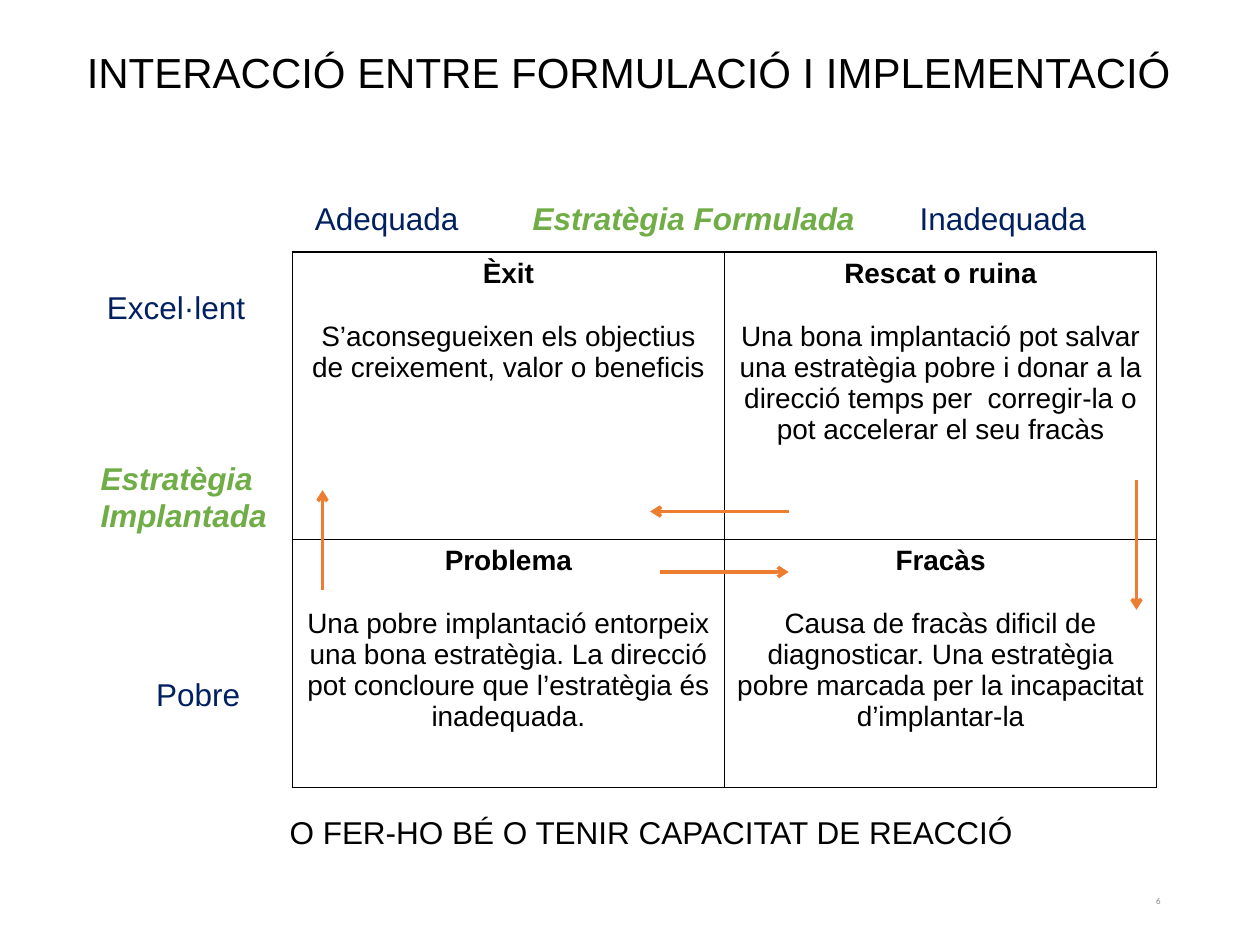
from lxml.etree import SubElement
from pptx import Presentation
from pptx.dml.color import RGBColor
from pptx.enum.shapes import MSO_CONNECTOR as Connector
from pptx.enum.text import MSO_ANCHOR as Anchor, PP_ALIGN as Align
from pptx.oxml.ns import qn
from pptx.util import Inches, Pt

BLACK = RGBColor(0x00, 0x00, 0x00)
NAVY = RGBColor(0x00, 0x20, 0x60)
GREEN = RGBColor(0x70, 0xAD, 0x47)
ORANGE = RGBColor(0xED, 0x7D, 0x31)
GREY = RGBColor(0x8C, 0x8C, 0x8C)

# Text styles
TITLE = dict(name="Arial", size=Pt(24), color=BLACK)
CLOSING = dict(TITLE, size=Pt(18))
LEVEL = dict(CLOSING, color=NAVY)
AXIS = dict(CLOSING, color=GREEN, bold=True, italic=True)
CELL = dict(TITLE, size=Pt(16), bold=False)
HEADING = dict(CELL, bold=True)
NUMBER = dict(name="Calibri", size=Pt(5.1), color=GREY)

# Matrix: one (heading, explanation) pair per quadrant
QUADRANTS = [
    [("Èxit", "S’aconsegueixen els objectius de creixement, valor o beneficis"),
     ("Rescat o ruina", "Una bona implantació pot salvar una estratègia pobre i donar a la "
      "direcció temps per  corregir-la o pot accelerar el seu fracàs")],
    [("Problema", "Una pobre implantació entorpeix una bona estratègia. La direcció "
      "pot concloure que l’estratègia és inadequada."),
     ("Fracàs", "Causa de fracàs dificil de diagnosticar. Una estratègia pobre "
      "marcada per la incapacitat d’implantar-la")],
]
LEFT, TOP = 2.32, 2.0
COLUMN_WIDTH = 3.43
ROW_HEIGHTS = [2.28, 1.97]
MIDDLE_X, MIDDLE_Y = LEFT + COLUMN_WIDTH, TOP + ROW_HEIGHTS[0]
BOTTOM = TOP + sum(ROW_HEIGHTS)
LINE_HEIGHT = 0.4
HEADER_Y = TOP - 0.47

# Texts: lines, left, top, width, height, style, alignment, wrap
TEXTS = [
    (["INTERACCIÓ ENTRE FORMULACIÓ I IMPLEMENTACIÓ"], 0.59, 0.32, 9.29, 0.5,
     TITLE, Align.LEFT, True),
    (["Adequada"], 2.4, HEADER_Y, 1.35, LINE_HEIGHT, LEVEL, Align.LEFT, False),
    (["Estratègia Formulada"], 4.13, HEADER_Y, 2.76, LINE_HEIGHT, AXIS, Align.JUSTIFY, True),
    (["Inadequada"], 7.2, HEADER_Y, 1.53, LINE_HEIGHT, LEVEL, Align.LEFT, False),
    (["Excel·lent"], 0.75, 2.24, 1.31, LINE_HEIGHT, LEVEL, Align.LEFT, False),
    (["Estratègia", "Implantada"], 0.7, 3.59, 1.53, 0.71, AXIS, Align.JUSTIFY, False),
    (["Pobre"], 1.14, 5.31, 0.88, LINE_HEIGHT, LEVEL, Align.LEFT, False),
    (["O FER-HO BÉ O TENIR CAPACITAT DE REACCIÓ"], 2.2, BOTTOM + 0.15, 7.39, LINE_HEIGHT,
     CLOSING, Align.LEFT, True),
    (["6"], 7.06, 6.95, 2.25, LINE_HEIGHT, NUMBER, Align.RIGHT, True),
]

# Arrows between quadrants, as offsets from the centre of the matrix
ARROWS = [
    ((0.51, -0.22), (-0.59, -0.22)),
    ((3.27, -0.47), (3.27, 0.56)),
    ((-0.51, 0.26), (0.51, 0.26)),
    ((-3.19, 0.4), (-3.19, -0.39)),
]


def write(paragraph, text, style, alignment):
    paragraph.alignment = alignment
    font = paragraph.add_run().font
    paragraph.runs[0].text = text
    for key, value in style.items():
        if key == "color":
            font.color.rgb = value
        else:
            setattr(font, key, value)


def add_text(slide, lines, left, top, width, height, style, alignment, wrap):
    box = slide.shapes.add_textbox(*map(Inches, (left, top, width, height)))
    frame = box.text_frame
    frame.word_wrap = wrap
    frame.vertical_anchor = Anchor.MIDDLE if style is NUMBER else Anchor.TOP
    for index, line in enumerate(lines):
        paragraph = frame.add_paragraph() if index else frame.paragraphs[0]
        write(paragraph, line, style, alignment)


def add_borders(cell):
    properties = cell._tc.get_or_add_tcPr()
    for side in ("lnL", "lnR", "lnT", "lnB"):
        border = SubElement(properties, qn(f"a:{side}"), w=str(Pt(1)))
        fill = SubElement(border, qn("a:solidFill"))
        SubElement(fill, qn("a:srgbClr"), val=str(BLACK))


def add_matrix(slide):
    frame = slide.shapes.add_table(2, 2, *map(Inches, (
        LEFT, TOP, 2 * COLUMN_WIDTH, sum(ROW_HEIGHTS))))
    table = frame.table
    table.first_row = table.horz_banding = False
    for column in table.columns:
        column.width = Inches(COLUMN_WIDTH)
    for row, height, quadrants in zip(table.rows, ROW_HEIGHTS, QUADRANTS):
        row.height = Inches(height)
        for cell, (heading, explanation) in zip(row.cells, quadrants):
            add_borders(cell)
            cell.fill.background()
            write(cell.text_frame.paragraphs[0], heading, HEADING, Align.CENTER)
            paragraph = cell.text_frame.add_paragraph()
            paragraph.space_before = Pt(18)
            write(paragraph, explanation, CELL, Align.CENTER)


def add_arrow(slide, start, end):
    points = [Inches(value) for x, y in (start, end) for value in (MIDDLE_X + x, MIDDLE_Y + y)]
    arrow = slide.shapes.add_connector(Connector.STRAIGHT, *points)
    arrow.line.color.rgb = ORANGE
    arrow.line.width = Pt(2)
    SubElement(arrow.line._get_or_add_ln(), qn("a:tailEnd"), type="arrow")
    SubElement(arrow._element.spPr, qn("a:effectLst"))


def main():
    presentation = Presentation()
    presentation.slide_width, presentation.slide_height = Inches(10), Inches(7.5)
    slide = presentation.slides.add_slide(presentation.slide_layouts[6])
    add_matrix(slide)
    for text in TEXTS:
        add_text(slide, *text)
    for start, end in ARROWS:
        add_arrow(slide, start, end)
    presentation.save("out.pptx")


if __name__ == "__main__":
    main()
